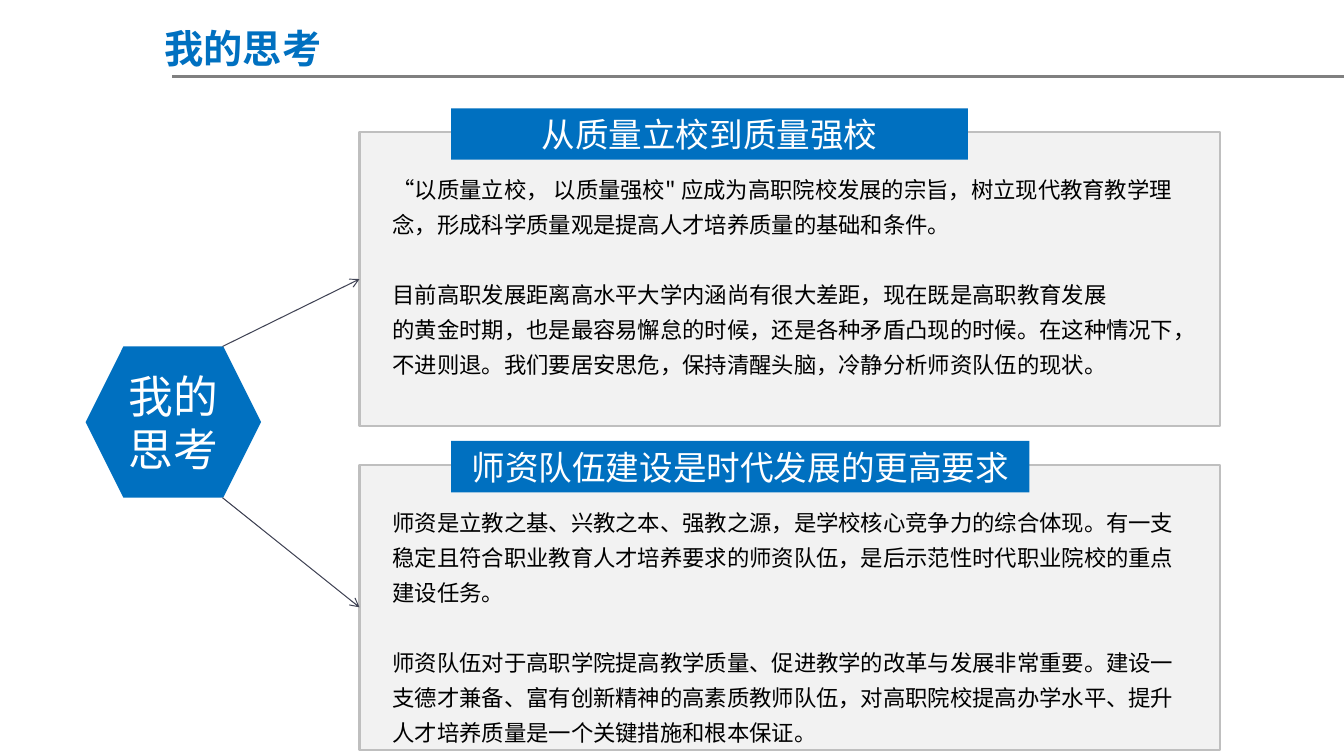
from lxml import etree
from pptx import Presentation
from pptx.dml.color import RGBColor
from pptx.enum.shapes import MSO_CONNECTOR, MSO_SHAPE
from pptx.enum.text import MSO_ANCHOR, PP_ALIGN
from pptx.oxml.ns import qn
from pptx.util import Inches, Pt

BLUE = RGBColor(0x00, 0x70, 0xC0)
WHITE = RGBColor(0xFF, 0xFF, 0xFF)
BLACK = RGBColor(0x00, 0x00, 0x00)
PANEL_FILL = RGBColor(0xF2, 0xF2, 0xF2)
PANEL_LINE = RGBColor(0xBF, 0xBF, 0xBF)
RULE_GRAY = RGBColor(0x80, 0x80, 0x80)
ARROW_GRAY = RGBColor(0x41, 0x44, 0x55)
RECTANGLE, HEXAGON = MSO_SHAPE.RECTANGLE, MSO_SHAPE.HEXAGON
STRAIGHT = MSO_CONNECTOR.STRAIGHT
LEFT, CENTER = PP_ALIGN.LEFT, PP_ALIGN.CENTER
TOP, MIDDLE = MSO_ANCHOR.TOP, MSO_ANCHOR.MIDDLE

FONT = "Noto Sans CJK SC"
COLUMNS, ROWS = 40, 24
PANEL_LEFT, PANEL_WIDTH = 10.7, 25.61
BANNER_LEFT, BANNER_HEIGHT, BANNER_RISE = 13.43, 1.63, 0.75
BODY_LEFT, BODY_DROP = 11.39, 1
LINE_PITCH = Pt(25)
HEXAGON_BOX = (2.55, 11, 5.22, 4.8)

PANELS = [
    {
        "top": 4.19, "height": 9.34, "banner_width": 15.38, "body_width": 24.41,
        "heading": "从质量立校到质量强校",
        "body": [
            "“以质量立校， 以质量强校\" 应成为高职院校发展的宗旨，树立现代教育教学理念，"
            "形成科学质量观是提高人才培养质量的基础和条件。",
            "目前高职发展距离高水平大学内涵尚有很大差距，现在既是高职教育发展",
            "的黄金时期，也是最容易懈怠的时候，还是各种矛盾凸现的时候。在这种情况下，"
            "不进则退。我们要居安思危，保持清醒头脑，冷静分析师资队伍的现状。",
        ],
    },
    {
        "top": 14.75, "height": 9.06, "banner_width": 17.21, "body_width": 23.93,
        "heading": "师资队伍建设是时代发展的更高要求",
        "body": [
            "师资是立教之基、兴教之本、强教之源，是学校核心竞争力的综合体现。有一支"
            "稳定且符合职业教育人才培养要求的师资队伍，是后示范性时代职业院校的重点建设任务。",
            "师资队伍对于高职学院提高教学质量、促进教学的改革与发展非常重要。建设一"
            "支德才兼备、富有创新精神的高素质教师队伍，对高职院校提高办学水平、"
            "提升人才培养质量是一个关键措施和根本保证。",
        ],
    },
]


class SlideBuilder:
    """Draws on one slide; lengths are columns and rows of the grid."""

    def __init__(self, presentation):
        self.column = presentation.slide_width / COLUMNS
        self.row = presentation.slide_height / ROWS
        self.slide = presentation.slides.add_slide(presentation.slide_layouts[6])

    def place(self, *lengths):
        """Turn alternating column and row lengths into slide units."""
        return [round(length * (self.row if index % 2 else self.column))
                for index, length in enumerate(lengths)]

    def fill_text(self, shape, lines, size, color, align=CENTER, anchor=MIDDLE, bold=False):
        frame = shape.text_frame
        frame.word_wrap = True
        frame.vertical_anchor = anchor
        frame.text = "\n".join(lines)
        for paragraph in frame.paragraphs:
            paragraph.alignment = align
            for run in paragraph.runs:
                run.font.name = FONT
                run.font.size = Pt(size)
                run.font.bold = bold
                run.font.color.rgb = color
                east_asian = etree.SubElement(run.font._element, qn("a:ea"))
                east_asian.set("typeface", FONT)
        return frame.paragraphs

    def box(self, kind, bounds, fill, outline=None):
        shape = self.slide.shapes.add_shape(kind, *self.place(*bounds))
        shape.shadow.inherit = False
        shape.fill.solid()
        shape.fill.fore_color.rgb = fill
        if outline is None:
            shape.line.fill.background()
        else:
            shape.line.color.rgb = outline
            shape.line.width = Pt(1.5)
        return shape

    def text(self, bounds, lines, size, color, **style):
        shape = self.slide.shapes.add_textbox(*self.place(*bounds))
        return self.fill_text(shape, lines, size, color, **style)

    def line(self, start, end, color, width, arrow=False):
        connector = self.slide.shapes.add_connector(STRAIGHT, *self.place(*start, *end))
        connector.line.color.rgb = color
        connector.line.width = Pt(width)
        properties = connector._element.spPr
        if arrow:
            tail = etree.SubElement(properties.find(qn("a:ln")), qn("a:tailEnd"))
            tail.set("type", "arrow")
        etree.SubElement(properties, qn("a:effectLst"))

    def panel(self, top, height, banner_width, body_width, heading, body):
        self.box(RECTANGLE, (PANEL_LEFT, top, PANEL_WIDTH, height), PANEL_FILL, PANEL_LINE)
        banner = self.box(
            RECTANGLE, (BANNER_LEFT, top - BANNER_RISE, banner_width, BANNER_HEIGHT), BLUE)
        self.fill_text(banner, [heading], 24, WHITE)
        paragraphs = self.text(
            (BODY_LEFT, top + BODY_DROP, body_width, height - BODY_DROP),
            body, 16, BLACK, align=LEFT, anchor=TOP)
        for paragraph in paragraphs:
            paragraph.line_spacing = LINE_PITCH
        paragraphs[1].space_before = LINE_PITCH


def main():
    presentation = Presentation()
    presentation.slide_width = Inches(13.34)
    presentation.slide_height = Inches(7.5)
    builder = SlideBuilder(presentation)

    builder.line((5.13, 2.43), (COLUMNS, 2.43), RULE_GRAY, 2)
    builder.text((1.83, 0.61, 10.8, 1.82), ["我的思考"], 28, BLUE, bold=True)

    hexagon = builder.box(HEXAGON, HEXAGON_BOX, BLUE)
    for paragraph in builder.fill_text(hexagon, ["我的", "思考"], 32, WHITE):
        paragraph.line_spacing = Pt(38.5)

    left, top, width, height = HEXAGON_BOX
    corner = left + width * 0.78
    for panel, corner_row in zip(PANELS, (top, top + height)):
        builder.panel(**panel)
        middle = panel["top"] + panel["height"] / 2
        builder.line((corner, corner_row), (PANEL_LEFT, middle), ARROW_GRAY, 0.75, arrow=True)

    presentation.save("out.pptx")


if __name__ == "__main__":
    main()
